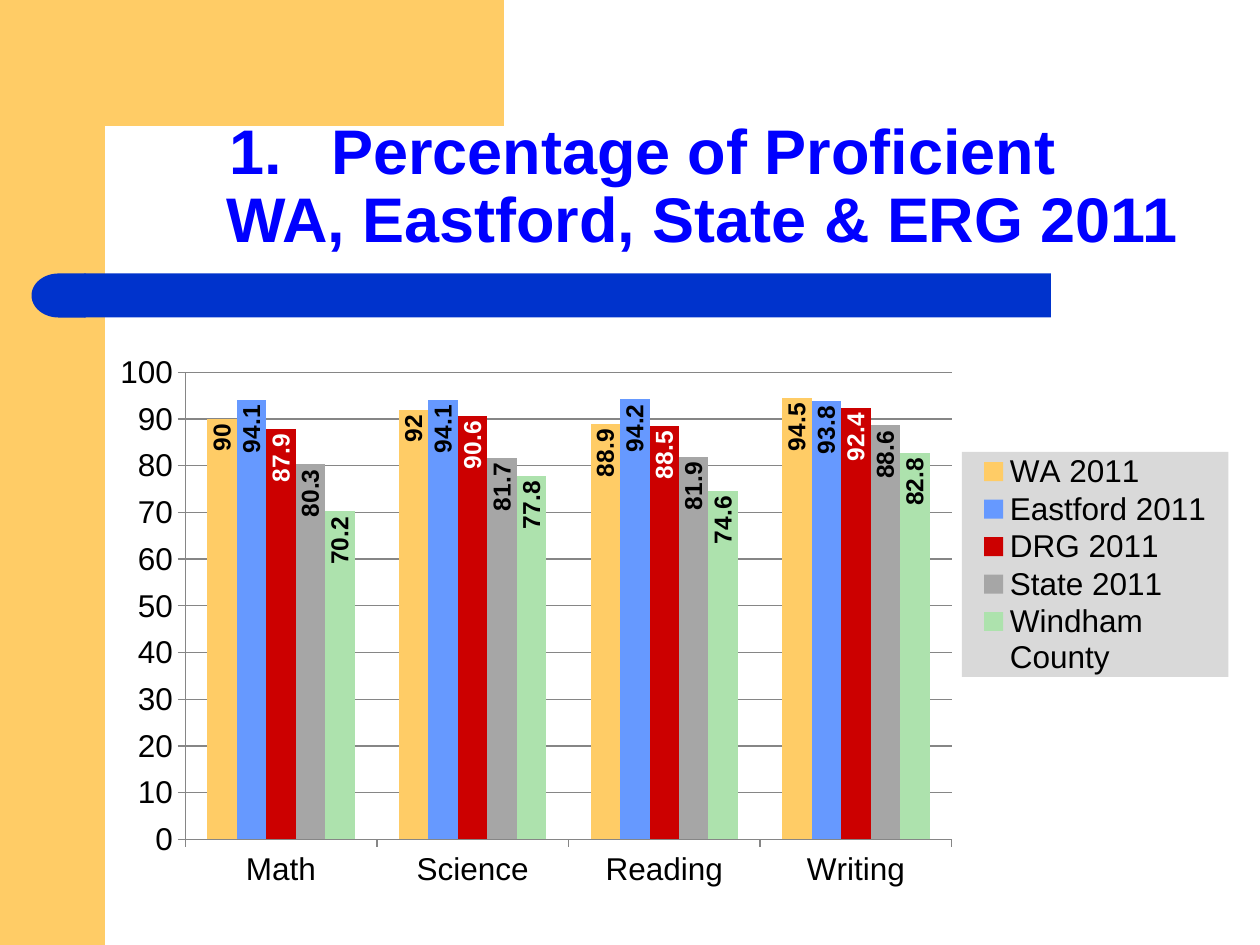
from dataclasses import dataclass
from math import cos, pi, sin

from lxml.etree import SubElement
from pptx import Presentation
from pptx.chart.data import CategoryChartData
from pptx.dml.color import RGBColor
from pptx.enum.chart import XL_CHART_TYPE, XL_LABEL_POSITION, XL_LEGEND_POSITION, XL_TICK_MARK
from pptx.enum.shapes import MSO_SHAPE
from pptx.enum.text import MSO_ANCHOR, PP_ALIGN
from pptx.oxml import parse_xml
from pptx.oxml.ns import nsdecls, qn
from pptx.util import Emu, Inches, Pt

COLUMN = 10 / 12  # the slide is a grid of 12 by 9 square cells
CORNER = 0.33


@dataclass(frozen=True)
class Theme:
    font: str = "Arial"
    sand: str = "FFCC66"
    bar: str = "0033CC"
    title: str = "0000FF"
    text: str = "000000"
    grid: str = "868686"
    legend: str = "D9D9D9"
    title_size: int = 36
    chart_size: int = 18
    label_size: int = 14


@dataclass(frozen=True)
class Box:
    left: float
    top: float
    width: float
    height: float

    def lengths(self) -> tuple[Emu, ...]:
        return tuple(Inches(v) for v in (self.left, self.top, self.width, self.height))


@dataclass(frozen=True)
class Series:
    name: str
    values: tuple[float, ...]
    color: str
    label_color: str = "000000"


THEME = Theme()
SUBJECTS = ("Math", "Science", "Reading", "Writing")
SERIES = (
    Series("WA 2011", (90, 92, 88.9, 94.5), THEME.sand),
    Series("Eastford 2011", (94.1, 94.1, 94.2, 93.8), "6699FF"),
    Series("DRG 2011", (87.9, 90.6, 88.5, 92.4), "CC0000", "FFFFFF"),
    Series("State 2011", (80.3, 81.7, 81.9, 88.6), "A6A6A6"),
    Series("Windham County", (70.2, 77.8, 74.6, 82.8), "ADE2AD"),
)


def rgb(color: str) -> RGBColor:
    return RGBColor.from_string(color)


def paint(shape, color: str) -> None:
    shape.shadow.inherit = False
    shape.fill.solid()
    shape.fill.fore_color.rgb = rgb(color)
    shape.line.fill.background()


def style_font(font, size: int, color: str, bold: bool = False) -> None:
    font.name, font.size, font.bold = THEME.font, Pt(size), bold
    font.color.rgb = rgb(color)


def add_block(page, kind, box: Box, color: str):
    shape = page.shapes.add_shape(kind, *box.lengths())
    paint(shape, color)
    return shape


def add_corner(page) -> None:
    """Top band whose lower edge rounds into the side band."""
    center = COLUMN + CORNER
    arc = [(center - CORNER * sin(step * pi / 24), center - CORNER * cos(step * pi / 24))
           for step in range(13)]
    outline = [(3.5, 0), (3.5, COLUMN), *arc, (COLUMN, 1.28), (0.5, 1.28)]
    builder = page.shapes.build_freeform(0.5, 0, scale=Inches(1))
    builder.add_line_segments(outline, close=True)
    paint(builder.convert_to_shape(), THEME.sand)


def add_title(page, box: Box) -> None:
    title = page.shapes.title
    title.left, title.top, title.width, title.height = box.lengths()
    frame = title.text_frame
    frame.vertical_anchor = MSO_ANCHOR.BOTTOM
    frame.word_wrap = True
    frame.text = "Percentage of Proficient \vWA, Eastford, State & ERG 2011"
    para = frame.paragraphs[0]
    para.alignment, para.line_spacing = PP_ALIGN.CENTER, 0.9
    properties = para._p.get_or_add_pPr()
    properties.set("marL", str(Inches(0.81)))
    properties.set("indent", str(-Inches(0.81)))
    SubElement(properties, qn("a:buFont"), typeface="+mj-lt")
    SubElement(properties, qn("a:buAutoNum"), type="arabicPeriod")
    for span in para.runs:
        style_font(span.font, THEME.title_size, THEME.title, True)


def place(parent, left: float, top: float, width: float, height: float, inner: bool = False):
    """Manual layout, in shares of the chart, for a plot area or a legend."""
    target = '<c:layoutTarget val="inner"/>' if inner else ""
    layout = parse_xml(
        f'<c:layout {nsdecls("c")}><c:manualLayout>{target}'
        f'<c:xMode val="edge"/><c:yMode val="edge"/><c:x val="{left}"/><c:y val="{top}"/>'
        f'<c:w val="{width}"/><c:h val="{height}"/></c:manualLayout></c:layout>')
    for old in parent.findall(qn("c:layout")):
        parent.remove(old)
    position = parent.find(qn("c:legendPos"))
    if position is None:
        parent.insert(0, layout)
    else:
        position.addnext(layout)


def style_series(plotted, series: Series) -> None:
    plotted.format.fill.solid()
    plotted.format.fill.fore_color.rgb = rgb(series.color)
    plotted.invert_if_negative = False
    labels = plotted.data_labels
    labels.show_value = True
    labels.position = XL_LABEL_POSITION.INSIDE_END
    style_font(labels.font, THEME.label_size, series.label_color, True)
    body = labels._element.find(qn("c:txPr")).find(qn("a:bodyPr"))
    body.set("rot", "-5400000")
    body.set("vert", "horz")


def add_scores(page, box: Box) -> None:
    data = CategoryChartData(number_format="General")
    data.categories = SUBJECTS
    for series in SERIES:
        data.add_series(series.name, series.values)
    chart = page.shapes.add_chart(XL_CHART_TYPE.COLUMN_CLUSTERED, *box.lengths(), data).chart
    chart.has_title = False
    style_font(chart.font, THEME.chart_size, THEME.text)

    plot = chart.plots[0]
    plot.gap_width, plot.overlap, plot.vary_by_categories = 150, 0, False
    for plotted, series in zip(plot.series, SERIES):
        style_series(plotted, series)

    scale = chart.value_axis
    scale.minimum_scale, scale.maximum_scale, scale.major_unit = 0, 100, 10
    scale.has_major_gridlines = True
    for axis in (scale, chart.category_axis):
        axis.major_tick_mark = XL_TICK_MARK.OUTSIDE
    for line in (scale.format.line, chart.category_axis.format.line,
                 scale.major_gridlines.format.line):
        line.color.rgb, line.width = rgb(THEME.grid), Pt(0.75)

    chart.has_legend = True
    legend = chart.legend
    legend.position, legend.include_in_layout = XL_LEGEND_POSITION.RIGHT, False
    style_font(legend.font, THEME.chart_size, THEME.text)
    legend._element.find(qn("c:txPr")).addprevious(parse_xml(
        f'<c:spPr {nsdecls("c", "a")}><a:solidFill><a:srgbClr val="{THEME.legend}"/>'
        '</a:solidFill><a:ln><a:noFill/></a:ln></c:spPr>'))
    place(legend._element, 0.765, 0.2, 0.235, 0.39)
    place(chart._chartSpace.chart.plotArea, 0.08, 0.062, 0.676, 0.81, inner=True)


def main() -> None:
    deck = Presentation()
    deck.slide_width, deck.slide_height = Inches(10), Inches(7.5)
    page = deck.slides.add_slide(deck.slide_layouts[5])
    add_block(page, MSO_SHAPE.RECTANGLE, Box(0, 0, COLUMN, 9 * COLUMN), THEME.sand)
    add_corner(page)
    add_block(page, MSO_SHAPE.RECTANGLE, Box(0.67, 2.17, 7.67, 0.35), THEME.bar)
    cap = add_block(page, MSO_SHAPE.FLOWCHART_DELAY, Box(0.25, 2.17, 0.43, 0.35), THEME.bar)
    cap.rotation = 180
    add_title(page, Box(COLUMN, COLUMN, 8.67, 1.25))
    add_scores(page, Box(0.75, 2.67, 9, 4.58))
    deck.save("out.pptx")


if __name__ == "__main__":
    main()
